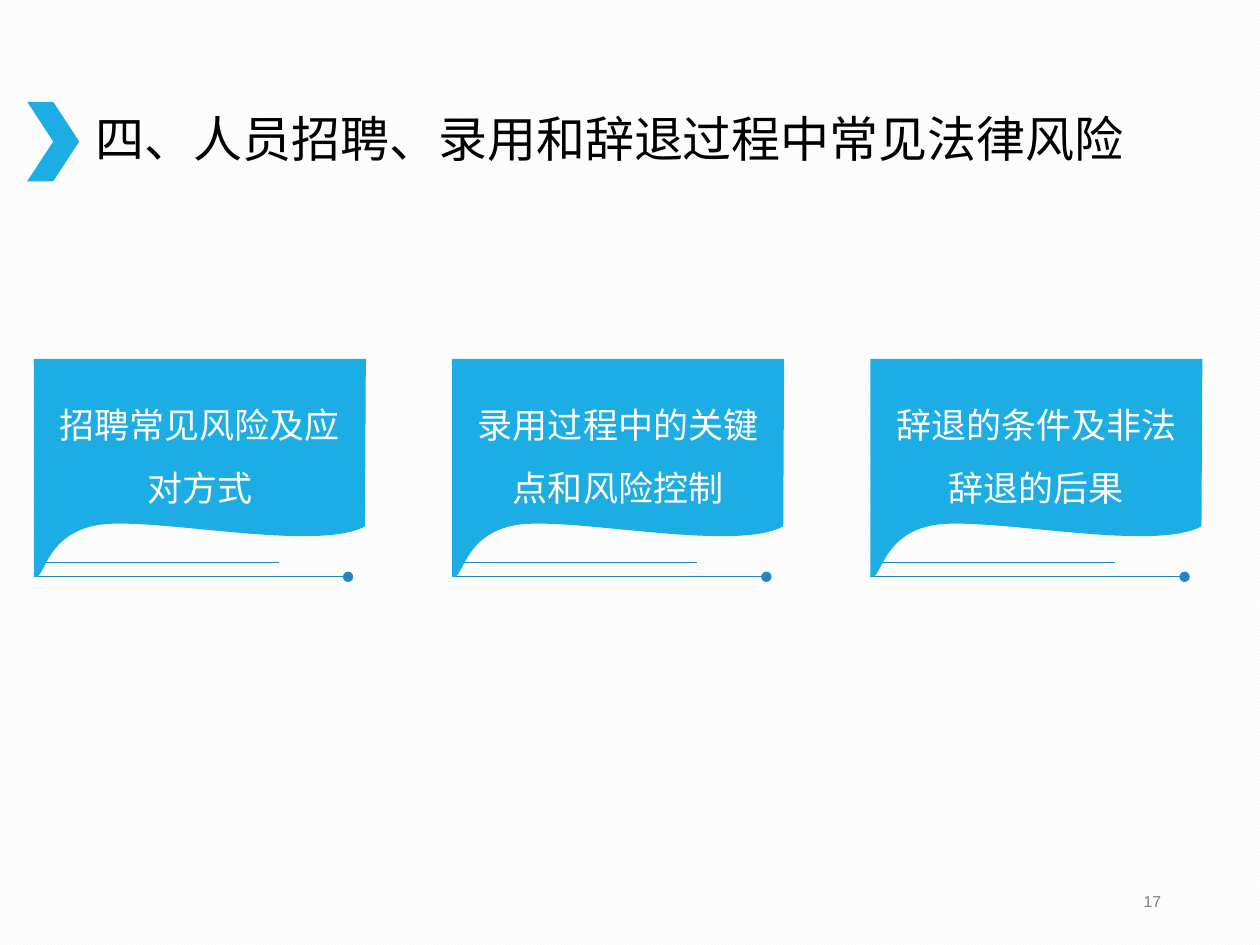
from dataclasses import dataclass

from lxml.etree import SubElement
from pptx import Presentation
from pptx.dml.color import RGBColor
from pptx.enum.dml import MSO_PATTERN
from pptx.enum.shapes import MSO_CONNECTOR, MSO_SHAPE
from pptx.enum.text import MSO_ANCHOR as Anchor, PP_ALIGN as Align
from pptx.oxml.ns import qn
from pptx.shapes.base import BaseShape
from pptx.shapes.shapetree import GroupShapes
from pptx.util import Pt

COLORS = {
    "card": "1CADE4",
    "line": "2683C6",
    "white": "FFFFFF",
    "stripe": "F2F2F2",
    "title": "000000",
    "number": "7F7F7F",
}
FONT = "Arial"
CARD_LEFT, CARD_TOP, CARD_PITCH = 19.4, 205, 239
# Outline of a card, relative to its top left corner
CORNERS = ((189.7, 0), (189.2, 95.8), (36.7, 95), (0, 124.8))
# Two control points for each curve, by the corner where the curve ends
CURVES = {
    2: ((161.3, 110.9), (68.4, 90)),
    3: ((5.8, 100.1), (6.5, 127.4)),
}


@dataclass(frozen=True)
class Rule:
    start: float
    end: float
    y: float
    dot: bool = False


RULES = (Rule(6.2, 140, 116.2), Rule(0, 179.5, 124.6, dot=True))


@dataclass(frozen=True)
class Card:
    column: int
    text: str

    @property
    def left(self) -> float:
        return CARD_LEFT + self.column * CARD_PITCH


CARDS = [
    Card(column, text)
    for column, text in enumerate(
        ("招聘常见风险及应对方式", "录用过程中的关键点和风险控制", "辞退的条件及非法辞退的后果")
    )
]


def rgb(name: str) -> RGBColor:
    return RGBColor.from_string(COLORS[name])


def write(
    box: BaseShape,
    text: str,
    *,
    size: float,
    color: str,
    align: Align = Align.LEFT,
    spacing: float = 1.0,
    insets: tuple = (7.2, 3.6, 7.2, 3.6),
) -> None:
    frame = box.text_frame
    frame.word_wrap = True
    frame.vertical_anchor = Anchor.MIDDLE
    frame.margin_left, frame.margin_top, frame.margin_right, frame.margin_bottom = map(Pt, insets)
    para = frame.paragraphs[0]
    para.alignment = align
    para.line_spacing = spacing
    span = para.add_run()
    span.text = text
    span.font.name = FONT
    span.font.size = Pt(size)
    span.font.color.rgb = rgb(color)


def paint(shape: BaseShape) -> None:
    shape.shadow.inherit = False
    shape.fill.solid()
    shape.fill.fore_color.rgb = rgb("card")
    shape.line.fill.background()


def bend_edges(shape: BaseShape) -> None:
    """Turn the straight edges named in CURVES into cubic Bezier curves."""
    edges = list(shape._element.iter(qn("a:lnTo")))
    for index, controls in CURVES.items():
        edge = edges[index]
        curve = edge.makeelement(qn("a:cubicBezTo"))
        for x, y in controls:
            SubElement(curve, qn("a:pt"), x=str(Pt(x)), y=str(Pt(y)))
        curve.append(edge[0])
        edge.getparent().replace(edge, curve)


def draw_rule(shapes: GroupShapes, card: Card, rule: Rule) -> None:
    y = Pt(CARD_TOP + rule.y)
    line = shapes.add_connector(
        MSO_CONNECTOR.STRAIGHT, Pt(card.left + rule.start), y, Pt(card.left + rule.end), y
    )
    line.line.color.rgb = rgb("line")
    line.line.width = Pt(0.5)
    if rule.dot:
        SubElement(line.line._get_or_add_ln(), qn("a:tailEnd"), type="oval")
    SubElement(line._element.spPr, qn("a:effectLst"))


def draw_card(shapes: GroupShapes, card: Card) -> None:
    for rule in RULES:
        draw_rule(shapes, card, rule)
    builder = shapes.build_freeform(Pt(card.left), Pt(CARD_TOP))
    builder.add_line_segments([(Pt(card.left + x), Pt(CARD_TOP + y)) for x, y in CORNERS])
    banner = builder.convert_to_shape()
    bend_edges(banner)
    paint(banner)
    write(banner, card.text, size=20, color="white", align=Align.CENTER, spacing=1.5,
          insets=(7.2, 3.6, 7.2, 29.5))


def main() -> None:
    deck = Presentation()
    deck.slide_width, deck.slide_height = Pt(720), Pt(540)
    slide = deck.slides.add_slide(deck.slide_layouts[6])

    background = slide.background.fill
    background.patterned()
    background.pattern = MSO_PATTERN.LIGHT_UPWARD_DIAGONAL
    background.fore_color.rgb = rgb("stripe")
    background.back_color.rgb = rgb("white")

    chevron = slide.shapes.add_shape(MSO_SHAPE.CHEVRON, Pt(15.6), Pt(58.2), Pt(29.7), Pt(45.4))
    paint(chevron)

    for card in CARDS:
        draw_card(slide.shapes.add_group_shape().shapes, card)

    title = slide.shapes.add_textbox(Pt(49.5), Pt(28.8), Pt(621), Pt(104.4))
    write(title, "四、人员招聘、录用和辞退过程中常见法律风险", size=28, color="title",
          spacing=0.9, insets=(5.3, 2.7, 5.3, 2.7))

    number = slide.shapes.add_textbox(Pt(508.5), Pt(500.5), Pt(162), Pt(28.8))
    write(number, "17", size=9, color="number", align=Align.RIGHT)

    deck.save("out.pptx")


if __name__ == "__main__":
    main()
